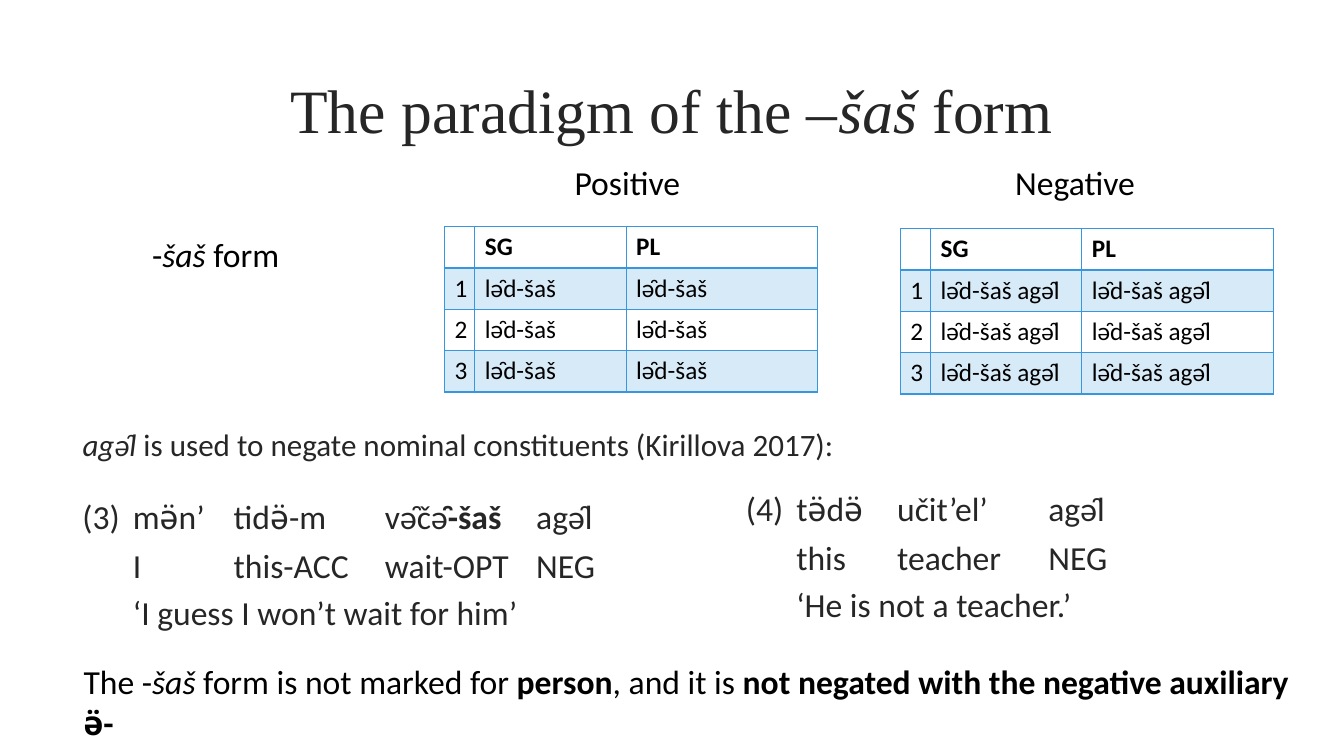
from pptx import Presentation
from pptx.dml.color import RGBColor as RGB
from pptx.enum.text import MSO_ANCHOR as Anchor, PP_ALIGN as Align
from pptx.oxml.ns import qn
from pptx.util import Pt
from lxml.etree import SubElement as Sub

PX = 9144  # 100 px to the inch
BLACK = RGB(0x00, 0x00, 0x00)
DARK = RGB(0x26, 0x26, 0x26)
BLUE = RGB(0x37, 0x96, 0xDD)


def px(*sizes):
    return [size * PX for size in sizes]


def style(run, size, color, font="Calibri", mark=""):
    run.font.size = Pt(size)
    run.font.name = font
    run.font.color.rgb = color
    run.font.bold = mark == "b"
    run.font.italic = mark == "i"


def fill_line(line, parts, size, color, font="Calibri"):
    """Add (text, mark) parts to a paragraph; the mark is b, i or empty."""
    for text, mark in parts:
        run = line.add_run()
        run.text = text
        style(run, size, color, font, mark)


def add_text(slide, box, parts, size=24, color=BLACK, font="Calibri"):
    frame = slide.shapes.add_textbox(*px(*box)).text_frame
    frame.word_wrap = True
    fill_line(frame.paragraphs[0], parts, size, color, font)
    return frame


def add_title(slide, box, parts):
    frame = add_text(slide, box, parts, 44, DARK, "Times New Roman")
    frame.vertical_anchor = Anchor.MIDDLE
    frame.paragraphs[0].alignment = Align.CENTER


def add_gloss(slide, box, words, gloss, meaning):
    """Place a numbered example with its gloss and translation."""
    frame = add_text(slide, box, words, 24, DARK)
    frame.margin_top = 61 * PX
    for text in (gloss, meaning):
        fill_line(frame.add_paragraph(), [(text, "")], 24, DARK)
    first, _, last = frame.paragraphs
    first.space_after = last.space_after = Pt(6)
    last.space_before = Pt(4.8)
    for line in frame.paragraphs:
        tabs = Sub(line._p.get_or_add_pPr(), qn("a:tabLst"))
        for stop in range(50, 501, 50):
            Sub(tabs, qn("a:tab"), pos=str(stop * PX), algn="l")


def add_edges(cell, head):
    props = cell._tc.get_or_add_tcPr()
    for side in "LRTB":
        width = 2 if head and side == "B" else 1
        edge = Sub(props, qn(f"a:ln{side}"), w=str(Pt(width)))
        Sub(Sub(edge, qn("a:solidFill")), qn("a:srgbClr"), val=str(BLUE))


def add_shade(cell, shaded):
    if not shaded:
        cell.fill.background()
        return
    cell.fill.solid()
    cell.fill.fore_color.rgb = BLUE
    color = cell._tc.tcPr.find(qn("a:solidFill")).find(qn("a:srgbClr"))
    Sub(color, qn("a:alpha"), val="20000")


def add_forms(slide, left, top, form):
    """Place a person by number table that holds one form throughout."""
    rows = [("", "SG", "PL")] + [(str(n), form, form) for n in (1, 2, 3)]
    widths, height = (30, 150, 190), 41
    box = px(left, top, sum(widths), height * len(rows))
    table = slide.shapes.add_table(len(rows), len(widths), *box).table
    table.first_row = table.horz_banding = False
    for col, width in zip(table.columns, widths):
        col.width = width * PX
    for r, row in enumerate(rows):
        table.rows[r].height = height * PX
        for c, text in enumerate(row):
            cell = table.cell(r, c)
            add_edges(cell, r == 0)
            add_shade(cell, r % 2 == 1)
            line = cell.text_frame.paragraphs[0]
            if text:
                fill_line(line, [(text, "" if r else "b")], 18, BLACK)
            else:
                line.font.size = Pt(18)


def main():
    deck = Presentation()
    deck.slide_width, deck.slide_height = px(1333, 750)
    slide = deck.slides.add_slide(deck.slide_layouts[6])

    add_title(slide, (141, 37, 1050, 143),
              [("The paradigm of the –", ""), ("šaš ", "i"), ("form", "")])
    add_gloss(slide, (72, 431, 603, 194),
              [("(3)\tmə̈n’\ttidə̈-m\t\tvə̑čə", ""), ("̑-šaš\t", "b"),
               ("agə̑l", "")],
              "\tI\t\tthis-ACC\twait-OPT\tNEG",
              "\t‘I guess I won’t wait for him’")
    add_forms(slide, 441, 225, "lə̑d-šaš")
    add_forms(slide, 893, 227, "lə̑d-šaš agə̑l")
    add_text(slide, (72, 417, 811, 89),
             [("agə̑l", "i"),
              (" is used to negate nominal constituents (Kirillova 2017):", "")],
             22.2, DARK)
    add_gloss(slide, (730, 423, 603, 191),
              [("(4)\ttə̈də̈\tučit’el’\t\tagə̑l", "")],
              "\tthis\t\tteacher\tNEG",
              "\t‘He is not a teacher.’")
    add_text(slide, (73, 651, 1228, 50),
             [("The -", ""), ("šaš", "i"), (" form is not marked for ", ""),
              ("person", "b"), (", and it is ", ""),
              ("not negated with the negative auxiliary ə̈-", "b")])
    add_text(slide, (560, 156, 132, 50), [("Positive", "")])
    add_text(slide, (997, 156, 162, 50), [("Negative", "")])
    add_text(slide, (141, 227, 179, 50),
             [("-", ""), ("šaš", "i"), (" form", "")])

    deck.save("out.pptx")


if __name__ == "__main__":
    main()
